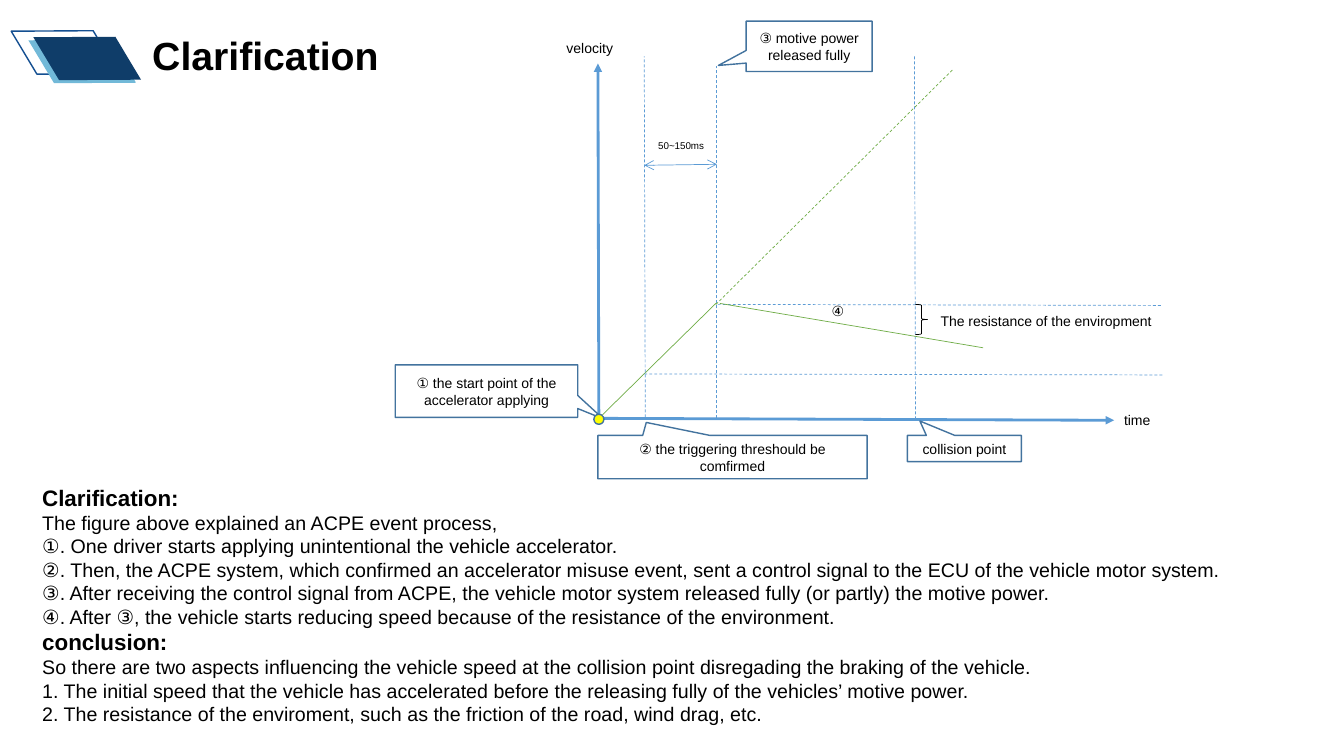
"""Build the clarification slide: a velocity-time diagram with its explanation."""
from dataclasses import dataclass
from typing import Optional

from lxml import etree
from pptx import Presentation
from pptx import util as u
from pptx.dml.color import RGBColor
from pptx.enum import dml, shapes, text
from pptx.oxml.ns import qn

EMU_PER_PX = 9144
FONT = "Arial"
BLACK, BLUE, GREEN, OUTLINE = "000000", "5B9BD5", "70AD47", "43739E"
LEFT, CENTER = text.PP_ALIGN.LEFT, text.PP_ALIGN.CENTER
Shape = shapes.MSO_SHAPE


@dataclass
class Box:
    left: int
    top: int
    width: int
    height: int


@dataclass
class Line:
    start: tuple[int, int]
    end: tuple[int, int]
    color: str = BLUE
    weight: float = 0.5
    dashed: bool = False
    head: Optional[str] = None
    tail: Optional[str] = None


@dataclass
class Figure:
    kind: Shape
    box: Box
    fill: Optional[str] = None
    line: Optional[str] = None
    weight: float = 1
    adjustments: tuple[float, ...] = ()
    rotation: float = 0
    words: str = ""


@dataclass
class Label:
    box: Box
    words: str
    size: int = 10
    align: text.PP_ALIGN = LEFT


def parallelogram(left: int, top: int, fill: Optional[str], line: Optional[str]) -> Figure:
    return Figure(Shape.PARALLELOGRAM, Box(left, top, 91, 70), fill, line,
                  adjustments=(0.59,), rotation=239.1)


def callout(box: Box, tip: tuple[float, float], words: str) -> Figure:
    return Figure(Shape.RECTANGULAR_CALLOUT, box, line=OUTLINE, adjustments=tip, words=words)


EMBLEM = [
    parallelogram(19, 17, None, "144F91"),
    parallelogram(36, 26, "72B9D8", None),
    parallelogram(41, 23, "0F3D69", None),
]
LINES = [
    Line((592, 417), (710, 301), GREEN),
    Line((710, 415), (710, 65), dashed=True),
    Line((640, 414), (639, 56), dashed=True),
    Line((639, 371), (1154, 372), dashed=True),
    Line((908, 416), (907, 56), dashed=True),
    Line((710, 302), (945, 69), GREEN, dashed=True),
    Line((712, 302), (1153, 303), dashed=True),
    Line((714, 301), (975, 345), GREEN),
    Line((639, 164), (711, 163), head="arrow", tail="arrow"),
    Line((590, 415), (1105, 417), weight=2, tail="triangle"),
    Line((594, 421), (593, 63), weight=2, tail="triangle"),
]
FIGURES = [
    callout(Box(593, 432, 267, 43), (-0.32, -0.8), "② the triggering threshould be comfirmed"),
    callout(Box(900, 432, 113, 26), (-0.39, -1.05), "collision point"),
    callout(Box(740, 21, 125, 50), (-0.72, 0.38), "③ motive power released fully"),
    callout(Box(392, 362, 181, 52), (0.64, 0.53), "① the start point of the accelerator applying"),
    Figure(Shape.RIGHT_BRACE, Box(908, 302, 12, 30), line=BLACK, weight=0.5),
    Figure(Shape.OVAL, Box(589, 411, 10, 10), "FFFF00", OUTLINE),
]
LABELS = [
    Label(Box(640, 134, 71, 22), "50~150ms", 7, CENTER),
    Label(Box(923, 305, 245, 27), "The resistance of the enviropment"),
    Label(Box(552, 34, 71, 27), "velocity"),
    Label(Box(1105, 403, 52, 27), "time"),
    Label(Box(815, 295, 39, 27), "④"),
]
SECTIONS = {
    "Clarification:": [
        "The figure above explained an ACPE event process,",
        "①. One driver starts applying unintentional the vehicle accelerator.",
        "②. Then, the ACPE system, which confirmed an accelerator misuse event, "
        "sent a control signal to the ECU of the vehicle motor system.",
        "③. After receiving the control signal from ACPE, the vehicle motor system "
        "released fully (or partly) the motive power.",
        "④. After ③, the vehicle starts reducing speed because of the resistance "
        "of the environment.",
    ],
    "conclusion:": [
        "So there are two aspects influencing the vehicle speed at the collision point "
        "disregading the braking of the vehicle.",
        "1. The initial speed that the vehicle has accelerated before the releasing fully "
        "of the vehicles’ motive power.",
        "2. The resistance of the enviroment, such as the friction of the road, wind drag, etc.",
    ],
}


def px(length: int) -> u.Emu:
    return u.Emu(length * EMU_PER_PX)


def place(box: Box) -> tuple[u.Emu, ...]:
    return px(box.left), px(box.top), px(box.width), px(box.height)


def paint(color_format, color: str) -> None:
    color_format.rgb = RGBColor.from_string(color)


def write(paragraph, words: str, size: int, bold: bool = False, align=LEFT) -> None:
    paragraph.text = words
    paragraph.alignment = align
    paragraph.font.name = FONT
    paragraph.font.size = u.Pt(size)
    paragraph.font.bold = bold
    paint(paragraph.font.color, BLACK)


def draw_line(slide, line: Line) -> None:
    connector = slide.shapes.add_connector(
        shapes.MSO_CONNECTOR.STRAIGHT, *map(px, line.start + line.end))
    paint(connector.line.color, line.color)
    connector.line.width = u.Pt(line.weight)
    if line.dashed:
        connector.line.dash_style = dml.MSO_LINE.DASH
    properties = connector.line._get_or_add_ln()
    for tag, arrow in (("a:headEnd", line.head), ("a:tailEnd", line.tail)):
        if arrow:
            etree.SubElement(properties, qn(tag), type=arrow)
    etree.SubElement(connector._element.spPr, qn("a:effectLst"))


def draw_figure(slide, figure: Figure) -> None:
    shape = slide.shapes.add_shape(figure.kind, *place(figure.box))
    shape.shadow.inherit = False
    shape.rotation = figure.rotation
    for index, value in enumerate(figure.adjustments):
        shape.adjustments[index] = value
    if figure.fill:
        shape.fill.solid()
        paint(shape.fill.fore_color, figure.fill)
    else:
        shape.fill.background()
    if figure.line:
        paint(shape.line.color, figure.line)
        shape.line.width = u.Pt(figure.weight)
    else:
        shape.line.fill.background()
    if figure.words:
        write(shape.text_frame.paragraphs[0], figure.words, 10, align=CENTER)


def add_text_frame(slide, box: Box):
    frame = slide.shapes.add_textbox(*place(box)).text_frame
    frame.word_wrap = True
    return frame


def draw_label(slide, label: Label) -> None:
    frame = add_text_frame(slide, label.box)
    write(frame.paragraphs[0], label.words, label.size, align=label.align)


def draw_explanation(slide) -> None:
    frame = add_text_frame(slide, Box(32, 475, 1291, 252))
    paragraph = frame.paragraphs[0]
    for heading, sentences in SECTIONS.items():
        write(paragraph, heading, 16, bold=True)
        for sentence in sentences:
            paragraph = frame.add_paragraph()
            write(paragraph, sentence, 14)
        if heading != list(SECTIONS)[-1]:
            paragraph = frame.add_paragraph()


def main() -> None:
    presentation = Presentation()
    presentation.slide_width, presentation.slide_height = px(1333), px(750)
    slide = presentation.slides.add_slide(presentation.slide_layouts[5])
    title = slide.shapes.title
    title.left, title.top, title.width, title.height = place(Box(141, 26, 363, 57))
    write(title.text_frame.paragraphs[0], "Clarification", 28, bold=True)
    for figure in EMBLEM:
        draw_figure(slide, figure)
    for line in LINES:
        draw_line(slide, line)
    for figure in FIGURES:
        draw_figure(slide, figure)
    for label in LABELS:
        draw_label(slide, label)
    draw_explanation(slide)
    presentation.save("out.pptx")


if __name__ == "__main__":
    main()
